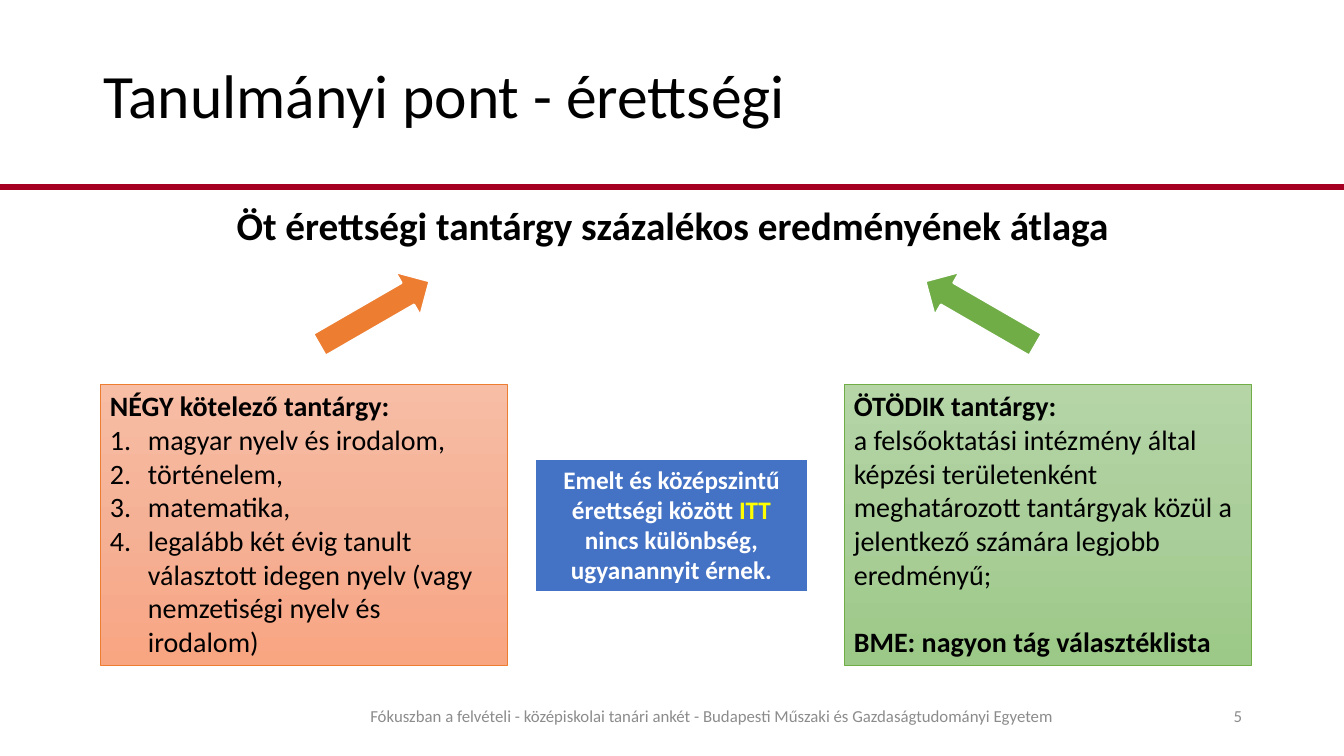
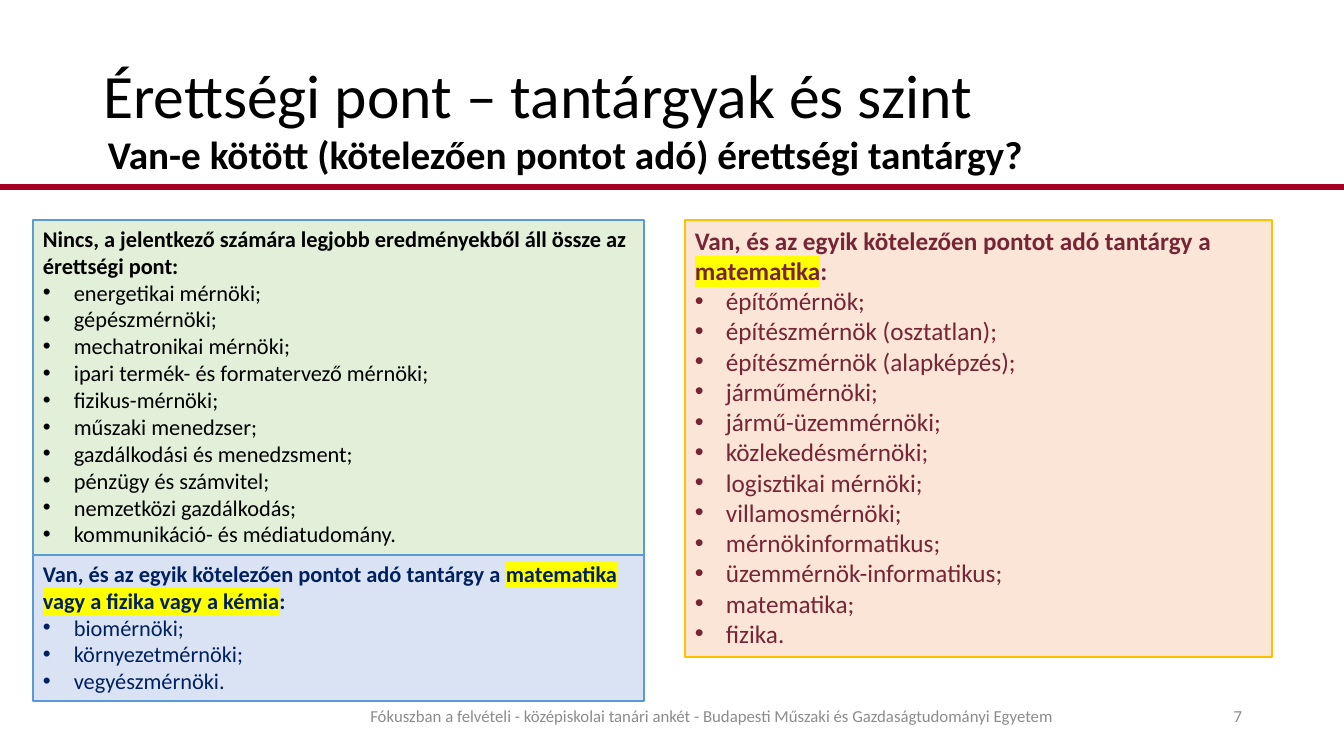
from copy import deepcopy

from pptx import Presentation
from pptx import util as u
from pptx.dml.color import RGBColor
from pptx.enum import shapes, text
from pptx.oxml.ns import qn
from lxml import etree

W, H = 1344, 756
FONT = "Calibri"
FOOTER = ("Fókuszban a felvételi - középiskolai tanári ankét - "
          "Budapesti Műszaki és Gazdaságtudományi Egyetem")
C = {
    "black": "000000", "white": "FFFFFF", "yellow": "FFFF00", "grey": "8C8C8C",
    "band": "A50021", "orange": "ED7D31", "green": "70AD47", "blue": "4472C4",
    "sky": "5B9BD5", "gold": "FFC000", "navy": "002060", "wine": "762536",
    "pale_green": "E2F0D9", "pale_blue": "DAE3F3", "pale_orange": "FBE5D6",
}
ORANGE_FADE = ["F7BDA5", "F5B196", "F8A582"]
GREEN_FADE = ["B5D5A7", "AACE9A", "9CC987"]
LEFT, CENTER, RIGHT = text.PP_ALIGN.LEFT, text.PP_ALIGN.CENTER, text.PP_ALIGN.RIGHT


def px(n):
    return u.Emu(round(n * 914400 / 100.8))


def rgb(name):
    return RGBColor.from_string(C.get(name, name))


# ---- text ----
def add_run(p, words, size, color="black", bold=False, highlight=None):
    r = p.add_run()
    r.text = words
    f = r.font
    f.name, f.size, f.bold = FONT, u.Pt(size), bold
    f.color.rgb = rgb(color)
    if highlight:
        mark = etree.Element(qn("a:highlight"))
        etree.SubElement(mark, qn("a:srgbClr"), val=C[highlight])
        r._r.rPr.find(qn("a:solidFill")).addnext(mark)


def add_bullet(p, indent, numbered):
    pPr = p._p.get_or_add_pPr()
    pPr.set("marL", str(px(indent)))
    pPr.set("indent", str(-px(indent)))
    if numbered:
        etree.SubElement(pPr, qn("a:buAutoNum"), type="arabicPeriod")
    else:
        etree.SubElement(pPr, qn("a:buFont"), typeface="Arial")
        etree.SubElement(pPr, qn("a:buChar"), char="•")


def add_text(s, box, words, size, color="black", bold=False, align=LEFT,
             anchor=text.MSO_ANCHOR.TOP, spacing=None):
    tf = s.shapes.add_textbox(*map(px, box)).text_frame
    tf.word_wrap, tf.vertical_anchor = True, anchor
    p = tf.paragraphs[0]
    p.alignment, p.line_spacing = align, spacing
    add_run(p, words, size, color, bold)


# ---- shapes ----
def add_shape(s, kind, box, fill, line, width):
    sp = s.shapes.add_shape(kind, *map(px, box))
    sp.shadow.inherit = False
    if isinstance(fill, list):
        sp.fill.gradient()
        sp.fill.gradient_angle = 270
        stops = sp._element.spPr.find(".//" + qn("a:gsLst"))
        stops.insert(1, deepcopy(stops[0]))
        for i, stop in enumerate(sp.fill.gradient_stops):
            stop.position = i / 2
            stop.color.rgb = rgb(fill[i])
    else:
        sp.fill.solid()
        sp.fill.fore_color.rgb = rgb(fill)
    sp.line.color.rgb = rgb(line)
    sp.line.width = u.Pt(width)
    return sp


def add_panel(s, box, fill, line, width, align=LEFT):
    sp = add_shape(s, shapes.MSO_SHAPE.RECTANGLE, box, fill, line, width)
    tf = sp.text_frame
    tf.word_wrap, tf.vertical_anchor = True, text.MSO_ANCHOR.TOP
    tf.auto_size = text.MSO_AUTO_SIZE.SHAPE_TO_FIT_TEXT
    tf.paragraphs[0].alignment = align
    return tf


def next_paragraph(tf):
    p = tf.add_paragraph()
    p.alignment = LEFT
    return p


def list_panel(s, box, fill, line, width, heading, items, size, color="black",
               indent=31, numbered=False):
    """Panel with a bold heading of (words, highlight) parts and a list."""
    tf = add_panel(s, box, fill, line, width)
    for words, highlight in heading:
        add_run(tf.paragraphs[0], words, size, color, True, highlight)
    for item in items:
        p = next_paragraph(tf)
        add_bullet(p, indent, numbered)
        add_run(p, item, size, color)


# ---- shared slide frame ----
def new_slide(prs, title, number):
    s = prs.slides.add_slide(prs.slide_layouts[5])
    band = s.shapes.add_connector(shapes.MSO_CONNECTOR.STRAIGHT,
                                  0, px(187), px(W), px(187))
    band.line.color.rgb = rgb("band")
    band.line.width = u.Pt(5)
    etree.SubElement(band._element.spPr, qn("a:effectLst"))

    head = s.shapes.title
    head.left, head.top, head.width, head.height = map(px, (93, 26, 910, 146))
    tf = head.text_frame
    tf.word_wrap, tf.vertical_anchor = True, text.MSO_ANCHOR.MIDDLE
    tf.margin_right = 0
    p = tf.paragraphs[0]
    p.alignment, p.line_spacing = LEFT, 0.9
    add_run(p, title, 44)

    for box, words, align in (((353, 701, 718, 30), FOOTER, CENTER),
                              ((1013, 701, 239, 30), str(number), RIGHT)):
        add_text(s, box, words, 12, "grey", align=align,
                 anchor=text.MSO_ANCHOR.MIDDLE)
    return s


# ---- slides ----
def average_slide(prs):
    s = new_slide(prs, "Tanulmányi pont - érettségi", 5)
    add_text(s, (93, 202, 1159, 53),
             "Öt érettségi tantárgy százalékos eredményének átlaga",
             28, bold=True, align=CENTER, spacing=0.9)

    # arrows towards the average
    for kind, x, turn, color in (
            (shapes.MSO_SHAPE.RIGHT_ARROW, 311, 330, "orange"),
            (shapes.MSO_SHAPE.LEFT_ARROW, 917, 30, "green")):
        add_shape(s, kind, (x, 288, 127, 50), color, "white", 1.5).rotation = turn

    # four compulsory subjects
    top, width, height = 384, 407, 281
    list_panel(s, (100, top, width, height), ORANGE_FADE, "orange", 0.5,
               [("NÉGY kötelező tantárgy:", None)],
               ["magyar nyelv és irodalom,", "történelem,", "matematika,",
                "legalább két évig tanult választott idegen nyelv "
                "(vagy nemzetiségi nyelv és irodalom)"],
               20, indent=38, numbered=True)

    # fifth subject
    tf = add_panel(s, (844, top, width, height), GREEN_FADE, "green", 0.5)
    add_run(tf.paragraphs[0], "ÖTÖDIK tantárgy:", 20, bold=True)
    add_run(next_paragraph(tf),
            "a felsőoktatási intézmény által képzési területenként meghatározott "
            "tantárgyak közül a jelentkező számára legjobb eredményű;", 20)
    p = next_paragraph(tf)
    p.space_before = u.Pt(24)
    add_run(p, "BME: nagyon tág választéklista", 20, bold=True)

    # note on levels
    tf = add_panel(s, (535, 459, 273, 133), "blue", "white", 1.5, CENTER)
    for words, color in (("Emelt és középszintű érettségi között ", "white"),
                         ("ITT", "yellow"),
                         (" nincs különbség, ugyanannyit érnek.", "white")):
        add_run(tf.paragraphs[0], words, 18, color, True)


def subjects_slide(prs):
    s = new_slide(prs, "Érettségi pont – tantárgyak és szint", 7)
    add_text(s, (98, 131, 1159, 57),
             "Van-e kötött (kötelezően pontot adó) érettségi tantárgy?",
             28, bold=True, spacing=0.9)

    left, top, width = 33, 220, 611
    required = "Van, és az egyik kötelezően pontot adó tantárgy a "
    list_panel(s, (left, top, width, 335), "pale_green", "sky", 1,
               [("Nincs, a jelentkező számára legjobb eredményekből áll össze "
                 "az érettségi pont:", None)],
               ["energetikai mérnöki;", "gépészmérnöki;",
                "mechatronikai mérnöki;",
                "ipari termék- és formatervező mérnöki;", "fizikus-mérnöki;",
                "műszaki menedzser;", "gazdálkodási és menedzsment;",
                "pénzügy és számvitel;", "nemzetközi gazdálkodás;",
                "kommunikáció- és médiatudomány."], 16)
    list_panel(s, (685, top, 587, 437), "pale_orange", "gold", 1,
               [(required, None), ("matematika", "yellow"), (":", None)],
               ["építőmérnök;", "építészmérnök (osztatlan);",
                "építészmérnök (alapképzés);", "járműmérnöki;",
                "jármű-üzemmérnöki;", "közlekedésmérnöki;",
                "logisztikai mérnöki;", "villamosmérnöki;",
                "mérnökinformatikus;", "üzemmérnök-informatikus;",
                "matematika;", "fizika."], 18, "wine")
    list_panel(s, (left, top + 335, width, 146), "pale_blue", "sky", 1,
               [(required, None),
                ("matematika vagy a fizika vagy a kémia", "yellow"), (":", None)],
               ["biomérnöki;", "környezetmérnöki;", "vegyészmérnöki."],
               16, "navy")


def main():
    prs = Presentation()
    prs.slide_width, prs.slide_height = px(W), px(H)
    average_slide(prs)
    subjects_slide(prs)
    prs.save("out.pptx")


if __name__ == "__main__":
    main()
